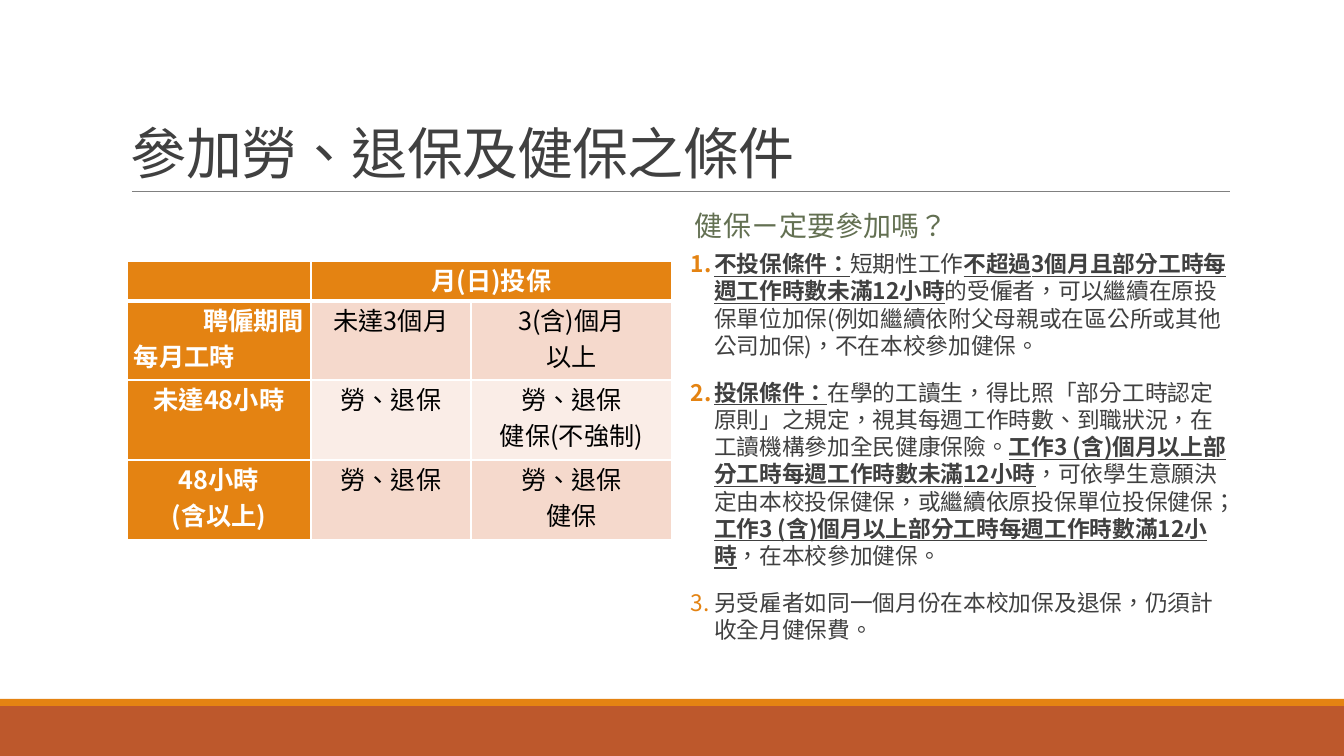
import pptx
import pptx.util
import pptx.dml.color
import pptx.enum.shapes
import pptx.enum.text
import pptx.oxml.ns
import lxml.etree
import dataclasses

PX = 12192000 / 1344
ALIGN = pptx.enum.text.PP_ALIGN
ANCHOR = pptx.enum.text.MSO_ANCHOR
QN = pptx.oxml.ns.qn


@dataclasses.dataclass(frozen=True)
class Theme:
    font: str = "Noto Sans CJK SC"
    white: str = "FFFFFF"
    black: str = "000000"
    text: str = "404040"
    heading: str = "637052"
    accent: str = "E48312"
    footer: str = "BD582C"
    rule: str = "808080"
    band_dark: str = "F5D9CC"
    band_light: str = "FAEDE7"
    title_size: float = 40
    heading_size: float = 20
    table_size: float = 18
    list_size: float = 16.2


THEME = Theme()

TABLE_ROWS = [
    [[], ["月(日)投保"], []],
    [["聘僱期間", "每月工時"], ["未達3個月"], ["3(含)個月", "以上"]],
    [["未達48小時"], ["勞、退保"], ["勞、退保", "健保(不強制)"]],
    [["48小時", "(含以上)"], ["勞、退保"], ["勞、退保", "健保"]],
]

RULES = [
    [("不投保條件：", True), ("短期性工作", False),
     ("不超過3個月且部分工時每週工作時數未滿12小時", True),
     ("的受僱者，可以繼續在原投保單位加保(例如繼續依附父母親或在區公所或其他公司加保)，不在本校參加健保。", False)],
    [("投保條件：", True),
     ("在學的工讀生，得比照「部分工時認定原則」之規定，視其每週工作時數、到職狀況，在工讀機構參加全民健康保險。", False),
     ("工作3 (含)個月以上部分工時每週工作時數未滿12小時", True),
     ("，可依學生意願決定由本校投保健保，或繼續依原投保單位投保健保；", False),
     ("工作3 (含)個月以上部分工時每週工作時數滿12小時", True),
     ("，在本校參加健保。", False)],
    [("另受雇者如同一個月份在本校加保及退保，仍須計收全月健保費。", False)],
]


def px(length):
    return pptx.util.Emu(round(length * PX))


def rgb(value):
    return pptx.dml.color.RGBColor.from_string(value)


def apply(target, values):
    for name, value in values.items():
        setattr(target, name, value)


def place(shape, box):
    apply(shape, dict(zip(("left", "top", "width", "height"), map(px, box))))


def add_run(paragraph, text, size, color, bold=False, underline=False, spacing=0):
    run = paragraph.add_run()
    run.text = text
    apply(run.font, {"name": THEME.font, "size": pptx.util.Pt(size),
                     "bold": bold, "underline": underline})
    run.font.color.rgb = rgb(color)
    properties = run.font._element
    properties.set("lang", "zh-TW")
    properties.set("spc", str(spacing))
    lxml.etree.SubElement(properties, QN("a:ea"), typeface=THEME.font)


def format_frame(frame, anchor, inset_x, inset_y):
    apply(frame, {"auto_size": pptx.enum.text.MSO_AUTO_SIZE.NONE, "word_wrap": True,
                  "vertical_anchor": anchor,
                  "margin_left": px(inset_x), "margin_right": px(inset_x),
                  "margin_top": px(inset_y), "margin_bottom": px(inset_y)})


def add_bar(slide, box, color):
    bar = slide.shapes.add_shape(pptx.enum.shapes.MSO_SHAPE.RECTANGLE, *map(px, box))
    bar.shadow.inherit = False
    bar.fill.solid()
    bar.fill.fore_color.rgb = rgb(color)
    bar.line.fill.background()


def add_footer(slide, box):
    left, top, width, height = box
    stripe = 7
    add_bar(slide, (left, top + stripe, width, height - stripe), THEME.footer)
    add_bar(slide, (left, top, width, stripe), THEME.accent)


def add_title(slide, box):
    left, top, width, height = box
    title = slide.shapes.title
    place(title, box)
    format_frame(title.text_frame, ANCHOR.BOTTOM, 10, 5)
    paragraph = title.text_frame.paragraphs[0]
    apply(paragraph, {"alignment": ALIGN.LEFT, "line_spacing": 0.85})
    add_run(paragraph, "參加勞、退保及健保之條件", THEME.title_size, THEME.text, spacing=-50)
    bottom = top + height
    rule = slide.shapes.add_connector(
        pptx.enum.shapes.MSO_CONNECTOR.STRAIGHT,
        px(left + 11), px(bottom), px(left + width), px(bottom))
    rule.line.color.rgb = rgb(THEME.rule)
    rule.line.width = pptx.util.Pt(0.5)
    lxml.etree.SubElement(rule._element.spPr, QN("a:effectLst"))


def set_borders(cell, bottom_width):
    properties = cell._tc.get_or_add_tcPr()
    widths = {"a:lnL": 1, "a:lnR": 1, "a:lnT": 1, "a:lnB": bottom_width}
    for position, (tag, width) in enumerate(widths.items()):
        line = lxml.etree.Element(QN(tag), w=str(pptx.util.Pt(width)))
        fill = lxml.etree.SubElement(line, QN("a:solidFill"))
        lxml.etree.SubElement(fill, QN("a:srgbClr"), val=THEME.white)
        properties.insert(position, line)


def add_conditions_table(slide, box):
    widths, heights = (184, 160, 201), (40, 79, 80, 80)
    table = slide.shapes.add_table(len(heights), len(widths), *map(px, box)).table
    apply(table, {"first_row": False, "horz_banding": False})
    for column, width in zip(table.columns, widths):
        column.width = px(width)
    for row, height in zip(table.rows, heights):
        row.height = px(height)
    for row_index, row in enumerate(TABLE_ROWS):
        for column_index, lines in enumerate(row):
            cell = table.cell(row_index, column_index)
            header = row_index == 0 or column_index == 0
            band = THEME.band_dark if row_index % 2 else THEME.band_light
            apply(cell, {"margin_left": px(7), "margin_right": px(7),
                         "margin_top": 0, "margin_bottom": 0,
                         "vertical_anchor": ANCHOR.TOP})
            cell.fill.solid()
            cell.fill.fore_color.rgb = rgb(THEME.accent if header else band)
            set_borders(cell, 1 if row_index else 3)
            for line_index, text in enumerate(lines):
                frame = cell.text_frame
                paragraph = frame.add_paragraph() if line_index else frame.paragraphs[0]
                paragraph.alignment = ALIGN.CENTER
                add_run(paragraph, text, THEME.table_size,
                        THEME.white if header else THEME.black, bold=header)
    corner = table.cell(1, 0).text_frame.paragraphs
    corner[0].alignment = ALIGN.RIGHT
    corner[1].alignment = ALIGN.JUSTIFY
    table.cell(0, 1).merge(table.cell(0, 2))


def add_rules(heading, body, box):
    left, top, width, height = box
    heading_height, body_offset = 47, 41
    place(heading, (left, top, width, heading_height))
    format_frame(heading.text_frame, ANCHOR.MIDDLE, 10, 0)
    paragraph = heading.text_frame.paragraphs[0]
    apply(paragraph, {"line_spacing": 0.9, "space_before": 0, "space_after": 0})
    add_run(paragraph, "健保ㄧ定要參加嗎？", THEME.heading_size, THEME.heading)

    place(body, (left, top + body_offset, width, height - body_offset))
    format_frame(body.text_frame, ANCHOR.TOP, 0, 5)
    for index, parts in enumerate(RULES):
        frame = body.text_frame
        paragraph = frame.add_paragraph() if index else frame.paragraphs[0]
        apply(paragraph, {"line_spacing": 1.0, "space_before": pptx.util.Pt(12 if index else 0),
                          "space_after": pptx.util.Pt(2)})
        properties = paragraph._p.get_or_add_pPr()
        properties.set("marL", str(px(29)))
        properties.set("indent", str(px(-23)))
        color = lxml.etree.SubElement(properties, QN("a:buClr"))
        lxml.etree.SubElement(color, QN("a:srgbClr"), val=THEME.accent)
        lxml.etree.SubElement(properties, QN("a:buFont"), typeface=THEME.font)
        lxml.etree.SubElement(properties, QN("a:buAutoNum"), type="arabicPeriod")
        for text, strong in parts:
            add_run(paragraph, text, THEME.list_size, THEME.text, strong, strong)


def main():
    presentation = pptx.Presentation()
    apply(presentation, {"slide_width": px(1344), "slide_height": px(756)})
    comparison_layout = presentation.slide_layouts[4]
    slide = presentation.slides.add_slide(comparison_layout)
    placeholders = {shape.placeholder_format.idx: shape for shape in slide.placeholders}
    add_footer(slide, (0, 699, 1344, 57))
    add_title(slide, (121, 31, 1109, 160))
    add_conditions_table(slide, (127, 261, 545, 279))
    add_rules(placeholders[3], placeholders[4], (685, 204, 545, 452))
    for index in (1, 2):
        unused = placeholders[index]._element
        unused.getparent().remove(unused)
    presentation.save("out.pptx")


if __name__ == "__main__":
    main()
